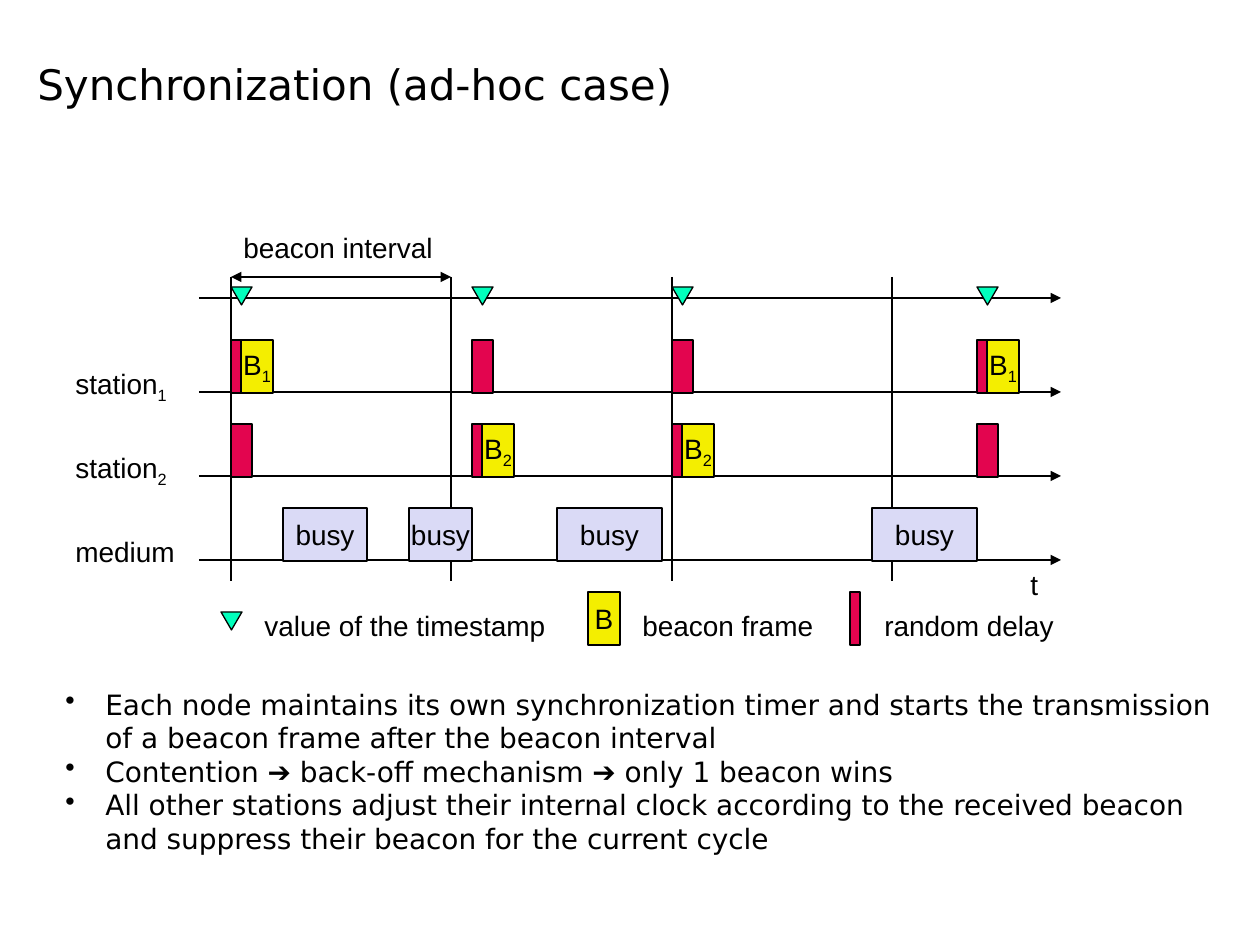
from dataclasses import dataclass

from lxml.etree import SubElement
from pptx import Presentation
from pptx.dml.color import RGBColor
from pptx.enum.shapes import MSO_CONNECTOR, MSO_SHAPE
from pptx.enum.text import MSO_ANCHOR, PP_ALIGN
from pptx.oxml.ns import qn
from pptx.util import Pt


@dataclass(frozen=True)
class Theme:
    ink: str = "000000"
    stamp: str = "01FFBC"
    beacon: str = "F4EE00"
    delay: str = "E3054F"
    busy: str = "DADAF6"
    diagram_font: str = "Arial"
    text_font: str = "DejaVu Sans"
    title_size: int = 24
    body_size: int = 16
    line_width: float = 0.75


THEME = Theme()
EMU_PER_PX = 914400 / 126

TITLE = "Synchronization (ad-hoc case)"
BULLETS = [
    ["Each node maintains its own synchronization timer and starts the transmission",
     "of a beacon frame after the beacon interval"],
    ["Contention ➔ back-off mechanism ➔ only 1 beacon wins"],
    ["All other stations adjust their internal clock according to the received beacon",
     "and suppress their beacon for the current cycle"],
]

# Time axes: baseline height and label (text, subscript)
STAMP_AXIS = 298
STATION_AXES = {"1": 392, "2": 476}
MEDIUM_AXIS = 560
ROW_LABELS = [("station", "1", 392, 118), ("station", "2", 476, 118),
              ("medium", "", MEDIUM_AXIS, 125)]
AXIS_START, AXIS_END = 199, 1061

INTERVAL_STARTS = [231, 451, 672, 892]
INTERVAL_TOP, INTERVAL_BOTTOM = 277, 581
TRANSMISSIONS = [(231, "1"), (472, "2"), (672, "2"), (977, "1")]  # start, winner
BUSY_PERIODS = [(283, 84), (409, 63), (557, 105), (872, 105)]  # start, width

FREE_LABELS = [
    ("beacon interval", 231, 224, 215),
    ("t", 1018, 561, 33),
    ("value of the timestamp", 252, 602, 307),
    ("beacon frame", 630, 602, 197),
    ("random delay", 872, 602, 195),
]
LEGEND_TOP = 592
LEGEND_STAMP, LEGEND_BEACON, LEGEND_DELAY = (221, 612), 588, 850

FRAME_HEIGHT = 53
BEACON_WIDTH = 32
SHORT_DELAY, LONG_DELAY = 10, 21
STAMP_WIDTH, STAMP_HEIGHT = 21, 18
STAMP_RISE = 11
LABEL_HEIGHT, LABEL_RISE = 47, 32
BULLET_INDENT = 40


def px(*lengths):
    return [round(length * EMU_PER_PX) for length in lengths]


def color(value):
    return RGBColor.from_string(value)


def add_span(para, text, font=THEME.diagram_font, size=THEME.body_size, subscript=False):
    span = para.add_run()
    span.text = text
    span.font.name = font
    span.font.size = Pt(size)
    span.font.color.rgb = color(THEME.ink)
    if subscript:
        span.font._element.set("baseline", "-25000")


def add_subscripted(para, text, subscript):
    add_span(para, text)
    if subscript:
        add_span(para, subscript, subscript=True)


def add_label(page, text, left, top, width, subscript=""):
    box = page.shapes.add_textbox(*px(left, top, width, LABEL_HEIGHT))
    box.text_frame.word_wrap = False
    add_subscripted(box.text_frame.paragraphs[0], text, subscript)


def add_line(page, x1, y1, x2, y2, arrows=()):
    """Draw a line; arrows names its arrow ends: headEnd, tailEnd."""
    line = page.shapes.add_connector(MSO_CONNECTOR.STRAIGHT, *px(x1, y1, x2, y2))
    line.line.color.rgb = color(THEME.ink)
    line.line.width = Pt(THEME.line_width)
    outline = line.line._get_or_add_ln()
    for end in arrows:
        SubElement(outline, qn(f"a:{end}"), type="triangle")
    SubElement(line._element.spPr, qn("a:effectLst"))


def add_block(page, kind, left, top, width, height, fill, text="", subscript=""):
    block = page.shapes.add_shape(kind, *px(left, top, width, height))
    block.shadow.inherit = False
    block.fill.solid()
    block.fill.fore_color.rgb = color(fill)
    block.line.color.rgb = color(THEME.ink)
    block.line.width = Pt(THEME.line_width)
    if text:
        frame = block.text_frame
        frame.word_wrap = False
        frame.vertical_anchor = MSO_ANCHOR.MIDDLE
        frame.margin_left = frame.margin_right = 0
        frame.paragraphs[0].alignment = PP_ALIGN.CENTER
        add_subscripted(frame.paragraphs[0], text, subscript)
    return block


def add_frame(page, left, top, width, fill, text="", subscript=""):
    add_block(page, MSO_SHAPE.RECTANGLE, left, top, width, FRAME_HEIGHT, fill, text, subscript)


def add_stamp(page, left, top):
    stamp = add_block(page, MSO_SHAPE.ISOSCELES_TRIANGLE, left, top,
                      STAMP_WIDTH, STAMP_HEIGHT, THEME.stamp)
    stamp._element.spPr.find(qn("a:xfrm")).set("flipV", "1")


def add_title(page):
    box = page.shapes.add_textbox(*px(25, 0, 833, 115))
    box.text_frame.word_wrap = True
    box.text_frame.vertical_anchor = MSO_ANCHOR.BOTTOM
    add_span(box.text_frame.paragraphs[0], TITLE, THEME.text_font, THEME.title_size)


def add_bullets(page):
    frame = page.shapes.add_textbox(*px(53, 681, 1179, 183)).text_frame
    frame.word_wrap = True
    indent = px(BULLET_INDENT)[0]
    for index, lines in enumerate(BULLETS):
        para = frame.add_paragraph() if index else frame.paragraphs[0]
        properties = para._p.get_or_add_pPr()
        properties.set("marL", str(indent))
        properties.set("indent", str(-indent))
        SubElement(properties, qn("a:buChar"), char="•")
        for number, line in enumerate(lines):
            if number:
                para.add_line_break()
            add_span(para, line, THEME.text_font)


def add_diagram(page):
    for axis in (STAMP_AXIS, *STATION_AXES.values(), MEDIUM_AXIS):
        add_line(page, AXIS_START, axis, AXIS_END, axis, ["tailEnd"])
    for start in INTERVAL_STARTS:
        add_line(page, start, INTERVAL_TOP, start, INTERVAL_BOTTOM)
    add_line(page, INTERVAL_STARTS[0], INTERVAL_TOP, INTERVAL_STARTS[1], INTERVAL_TOP,
             ["headEnd", "tailEnd"])

    for start, width in BUSY_PERIODS:
        add_frame(page, start, MEDIUM_AXIS - FRAME_HEIGHT + 1, width, THEME.busy, "busy")
    for start, winner in TRANSMISSIONS:
        add_stamp(page, start, STAMP_AXIS - STAMP_RISE)
        for station, axis in STATION_AXES.items():
            top = axis - FRAME_HEIGHT + 1
            if station == winner:
                add_frame(page, start + SHORT_DELAY, top, BEACON_WIDTH, THEME.beacon, "B", station)
            delay = SHORT_DELAY if station == winner else LONG_DELAY
            add_frame(page, start, top, delay, THEME.delay)

    for text, subscript, axis, width in ROW_LABELS:
        add_label(page, text, 63, axis - LABEL_RISE, width, subscript)
    for label in FREE_LABELS:
        add_label(page, *label)

    add_stamp(page, *LEGEND_STAMP)
    add_frame(page, LEGEND_BEACON, LEGEND_TOP, BEACON_WIDTH, THEME.beacon, "B")
    add_frame(page, LEGEND_DELAY, LEGEND_TOP, SHORT_DELAY, THEME.delay)


def main():
    deck = Presentation()
    deck.slide_width, deck.slide_height = px(1260, 945)
    page = deck.slides.add_slide(deck.slide_layouts[6])
    add_title(page)
    add_diagram(page)
    add_bullets(page)
    deck.save("out.pptx")


if __name__ == "__main__":
    main()
